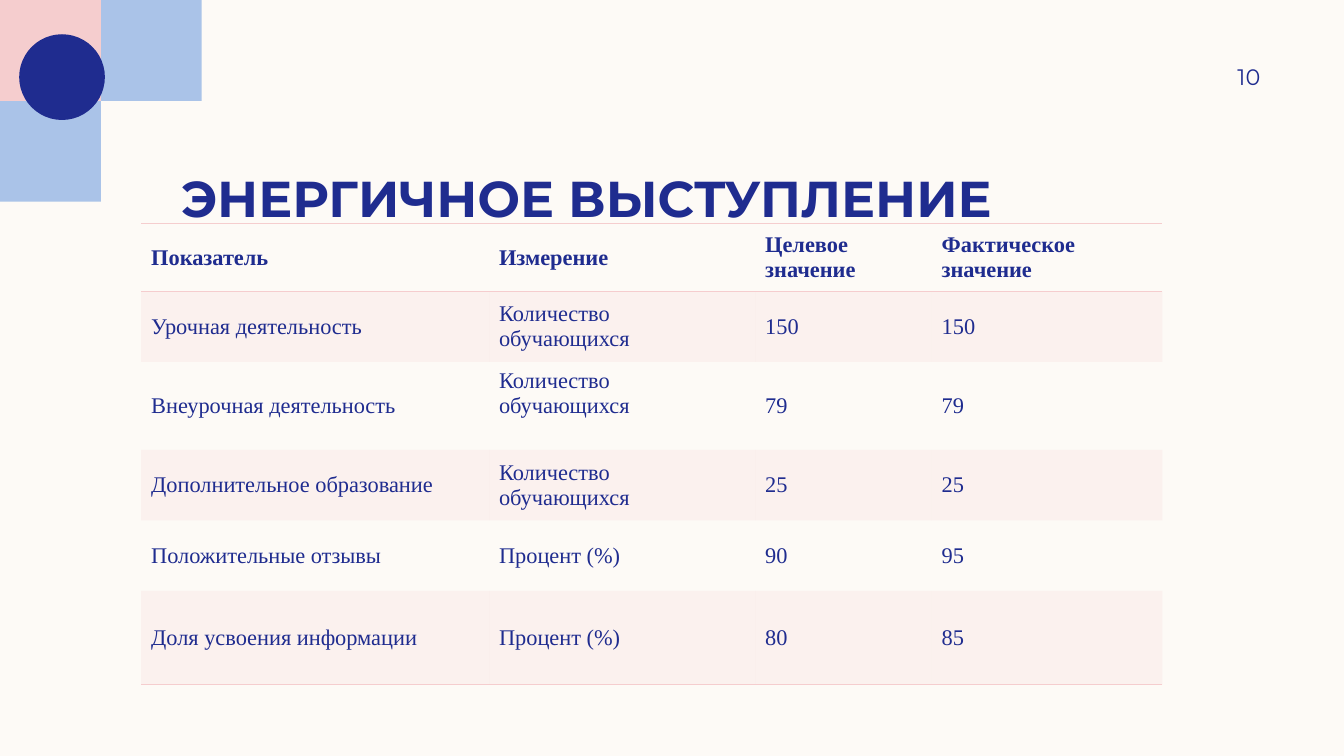
"""Build a slide with a table of target and actual performance figures."""
from dataclasses import dataclass

from lxml import etree
from pptx import Presentation
from pptx.dml.color import RGBColor
from pptx.enum.shapes import MSO_SHAPE
from pptx.enum.text import MSO_ANCHOR, PP_ALIGN
from pptx.oxml.ns import qn
from pptx.util import Inches, Pt

OVAL = MSO_SHAPE.OVAL
MIDDLE, BOTTOM = MSO_ANCHOR.MIDDLE, MSO_ANCHOR.BOTTOM
LEFT, RIGHT = PP_ALIGN.LEFT, PP_ALIGN.RIGHT
PLAIN_TABLE_STYLE = "{2D5ABB26-0587-4C30-8999-92F81FD0307C}"


@dataclass(frozen=True)
class Theme:
    background: str = "FDFAF6"
    navy: str = "1F2C8F"
    blue: str = "AAC3E8"
    pink: str = "F5CDCE"
    heading_font: str = "Montserrat"
    table_font: str = "Times New Roman"
    title_size: int = 36
    text_size: int = 16


theme = Theme()


def write_text(frame, text, font, size=theme.text_size, bold=False, align=LEFT):
    """Write one formatted paragraph into a text frame."""
    frame.word_wrap = True
    paragraph = frame.paragraphs[0]
    paragraph.alignment = align
    run = paragraph.add_run()
    run.text = text
    run.font.name = font
    run.font.size = Pt(size)
    run.font.bold = bold
    run.font.color.rgb = RGBColor.from_string(theme.navy)


def paint(shape, color):
    """Give a shape a flat fill with no line or shadow."""
    shape.shadow.inherit = False
    shape.fill.solid()
    shape.fill.fore_color.rgb = RGBColor.from_string(color)
    shape.line.fill.background()


presentation = Presentation()
presentation.slide_width = Inches(13.33)
presentation.slide_height = Inches(7.5)
slide = presentation.slides.add_slide(presentation.slide_layouts[6])
slide.background.fill.solid()
slide.background.fill.fore_color.rgb = RGBColor.from_string(theme.background)

corner_sectors = [
    (theme.blue, (1.7, 0), [(1.7, 0.01), (1.7, 1.12), (1.12, 2.09), (0.24, 2.65)], (0, 2.78)),
    (theme.pink, (0.75, 0), [(0.74, 0.22), (0.68, 0.73), (0.46, 1.19), (0.11, 1.54)], (0, 1.64)),
]
curve_steps = 32
for color, top_point, controls, left_point in corner_sectors:
    outline = [top_point]
    for step in range(curve_steps + 1):
        t = step / curve_steps
        weights = ((1 - t) ** 3, 3 * t * (1 - t) ** 2, 3 * t ** 2 * (1 - t), t ** 3)
        outline.append(tuple(
            sum(weight * point[axis] for weight, point in zip(weights, controls))
            for axis in (0, 1)
        ))
    outline.append(left_point)
    builder = slide.shapes.build_freeform(0, 0, scale=Inches(1))
    builder.add_line_segments(outline, close=True)
    paint(builder.convert_to_shape(), color)

dot = slide.shapes.add_shape(OVAL, Inches(0.19), Inches(0.34), Inches(0.85), Inches(0.85))
paint(dot, theme.navy)

title = slide.shapes.add_textbox(Inches(1.7), Inches(1.19), Inches(10.8), Inches(1.07))
title.text_frame.vertical_anchor = BOTTOM
title.text_frame.margin_top = title.text_frame.margin_bottom = 0
write_text(title.text_frame, "ЭНЕРГИЧНОЕ ВЫСТУПЛЕНИЕ", theme.heading_font,
           size=theme.title_size, bold=True)

rows = [
    ("Показатель", "Измерение", "Целевое значение", "Фактическое значение"),
    ("Урочная деятельность", "Количество обучающихся", "150", "150"),
    ("Внеурочная деятельность", "Количество обучающихся", "79", "79"),
    ("Дополнительное образование", "Количество обучающихся", "25", "25"),
    ("Положительные отзывы", "Процент (%)", "90", "95"),
    ("Доля усвоения информации", "Процент (%)", "80", "85"),
]
column_widths = [3.45, 2.64, 1.75, 2.29]
row_heights = [0.67, 0.7, 0.84, 0.7, 0.7, 0.93]
border_sides = {0: ("a:lnT", "a:lnB"), len(rows) - 1: ("a:lnB",)}

table = slide.shapes.add_table(
    len(rows), len(column_widths), Inches(1.4), Inches(2.22),
    Inches(sum(column_widths)), Inches(sum(row_heights)),
).table
table.horz_banding = False
table._tbl.tblPr.find(qn("a:tableStyleId")).text = PLAIN_TABLE_STYLE
for column, width in zip(table.columns, column_widths):
    column.width = Inches(width)
for row, height in zip(table.rows, row_heights):
    row.height = Inches(height)

for row_index, values in enumerate(rows):
    for column_index, value in enumerate(values):
        cell = table.cell(row_index, column_index)
        cell.vertical_anchor = MIDDLE
        write_text(cell.text_frame, value, theme.table_font, bold=row_index == 0)
        properties = cell._tc.get_or_add_tcPr()
        for side in border_sides.get(row_index, ()):
            border = etree.SubElement(properties, qn(side), w=str(Pt(1)))
            border_fill = etree.SubElement(border, qn("a:solidFill"))
            etree.SubElement(border_fill, qn("a:srgbClr"), val=theme.pink)
        if row_index % 2:
            cell.fill.solid()
            cell.fill.fore_color.rgb = RGBColor.from_string(theme.pink)
            tint = properties.find(qn("a:solidFill")).find(qn("a:srgbClr"))
            etree.SubElement(tint, qn("a:alpha"), val="20000")
        else:
            cell.fill.background()
table.cell(2, 1).margin_bottom = Inches(0.29)

page_number = slide.shapes.add_textbox(Inches(11.33), Inches(0.5), Inches(1.17), Inches(0.52))
page_number.text_frame.vertical_anchor = MIDDLE
page_number.text_frame.margin_right = 0
write_text(page_number.text_frame, "10", theme.heading_font, align=RIGHT)

presentation.save("out.pptx")
